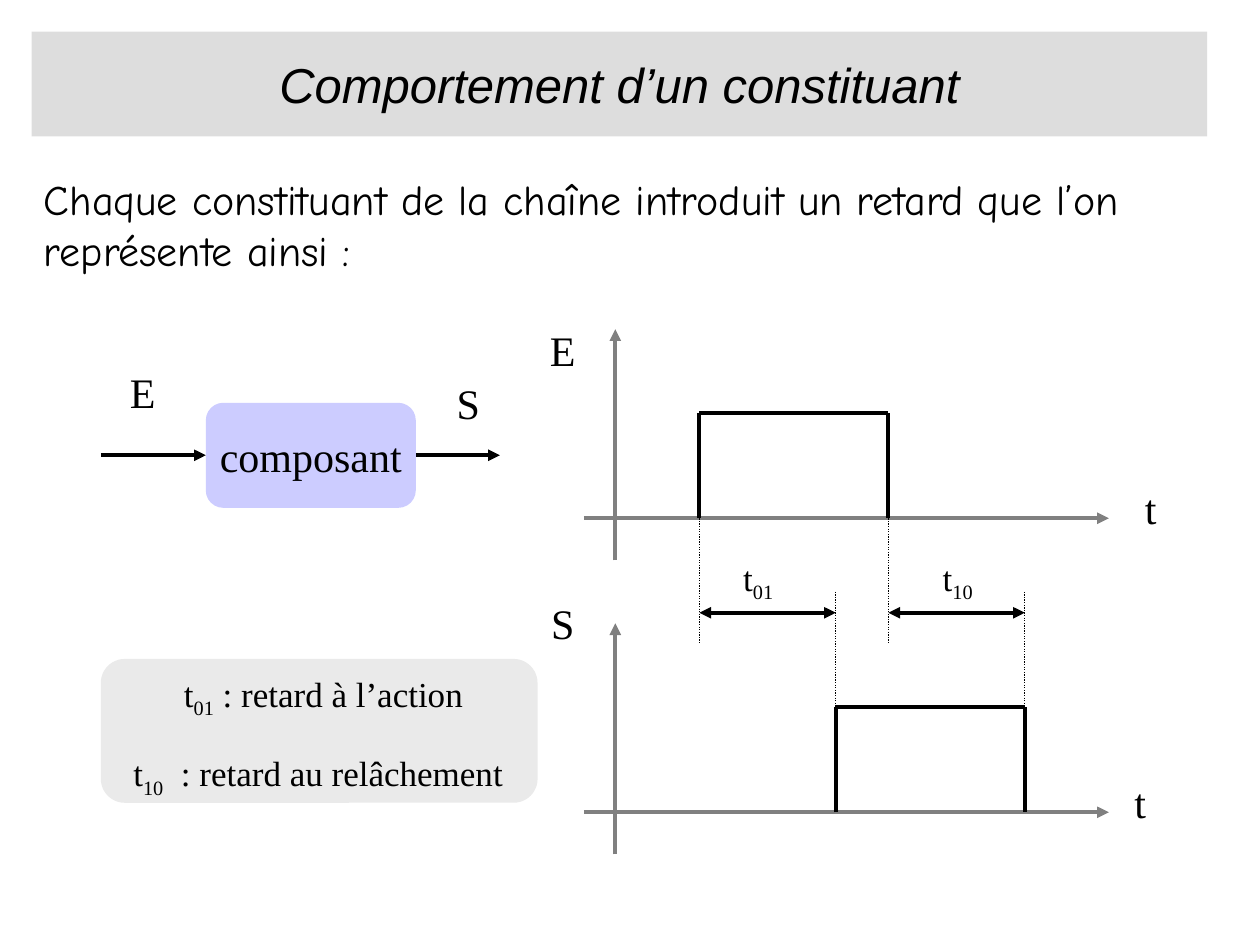
from dataclasses import dataclass
from typing import Any

from lxml import etree
from pptx import Presentation
from pptx import util as u
from pptx.dml.color import RGBColor
from pptx.enum import dml, shapes, text
from pptx.oxml.ns import qn

WIDTH, HEIGHT = 10, 7.5
STEP = 1 / 12
LEFT, TOP = 0.05, 0.03
SERIF = "Times New Roman"
BLACK, GREY = "000000", "808080"
CENTER = text.PP_ALIGN.CENTER
MIDDLE = text.MSO_ANCHOR.MIDDLE


@dataclass
class Signal:
    name: str
    base: int
    rise: int
    name_row: int
    t_col: int


@dataclass
class Label:
    words: str
    col: float
    row: float


SIGNALS = [Signal("E", 49, 66, 30, 106), Signal("S", 77, 79, 56, 105)]
PULSE_COLS, PULSE_ROWS = 18, 10
PORTS = [Label("E", 10, 34), Label("S", 41, 35)]
DELAYS = [Label("01", 69, 52), Label("10", 88, 52)]
DELAY_ROW = 58


def color(hex_code: str) -> RGBColor:
    return RGBColor.from_string(hex_code)


def x(col: float) -> int:
    return u.Inches(LEFT + col * STEP)


def y(row: float) -> int:
    return u.Inches(TOP + row * STEP)


def span(steps: float) -> int:
    return u.Inches(steps * STEP)


def apply(target: Any, formats: dict) -> None:
    for name, value in formats.items():
        setattr(target, name, value)


def write(p: Any, words: str, size: float, font: str = SERIF,
          sub: bool = False, italic: bool = False) -> None:
    r = p.add_run()
    r.text = words
    apply(r.font, {"size": u.Pt(size), "name": font, "italic": italic})
    r.font.color.rgb = color(BLACK)
    if sub:
        r._r.get_or_add_rPr().set("baseline", "-25000")


def text_box(s: Any, col: float, row: float, cols: float, rows: float,
             wrap: bool = True) -> Any:
    tf = s.shapes.add_textbox(x(col), y(row), span(cols), span(rows)).text_frame
    tf.word_wrap = wrap
    return tf.paragraphs[0]


def letter(s: Any, label: Label) -> None:
    p = text_box(s, label.col, label.row, 6, 6)
    p.alignment = CENTER
    write(p, label.words, 24)


def round_box(s: Any, col: float, row: float, cols: float, rows: float,
              fill: str) -> Any:
    sp = s.shapes.add_shape(shapes.MSO_SHAPE.ROUNDED_RECTANGLE,
                            x(col), y(row), span(cols), span(rows))
    sp.shadow.inherit = False
    sp.fill.solid()
    sp.fill.fore_color.rgb = color(fill)
    sp.line.fill.background()
    return sp


def line(s: Any, start: tuple, end: tuple, hex_code: str = BLACK,
         width: float = 2.25, ends: tuple = (), dotted: bool = False) -> Any:
    cn = s.shapes.add_connector(shapes.MSO_CONNECTOR.STRAIGHT,
                                x(start[0]), y(start[1]), x(end[0]), y(end[1]))
    cn.line.color.rgb = color(hex_code)
    cn.line.width = u.Pt(width)
    if dotted:
        cn.line.dash_style = dml.MSO_LINE.ROUND_DOT
    for tag in ends:
        etree.SubElement(cn.line._get_or_add_ln(), qn(tag), type="triangle")
    etree.SubElement(cn._element.spPr, qn("a:effectLst"))
    return cn


def add_title(s: Any) -> None:
    sp = s.shapes.title
    apply(sp, {"left": u.Inches(WIDTH * 0.025), "top": u.Inches(0.25),
               "width": u.Inches(9.33), "height": u.Inches(HEIGHT / 9)})
    sp.fill.solid()
    sp.fill.fore_color.rgb = color("DDDDDD")
    sp.text_frame.vertical_anchor = MIDDLE
    p = sp.text_frame.paragraphs[0]
    p.alignment = CENTER
    write(p, "Comportement d’un constituant", 28, "Arial", italic=True)


def add_component(s: Any) -> None:
    sp = round_box(s, 19, 38, 20, 10, "CCCCFF")
    apply(sp.text_frame, {"word_wrap": False, "vertical_anchor": MIDDLE})
    p = sp.text_frame.paragraphs[0]
    p.alignment = CENTER
    write(p, "composant", 24)
    line(s, (9, 43), (19, 43), ends=("a:tailEnd",)).end_connect(sp, 1)
    line(s, (39, 43), (47, 43), ends=("a:tailEnd",)).begin_connect(sp, 3)
    for port in PORTS:
        letter(s, port)


def add_signal(s: Any, signal: Signal) -> None:
    base, top = signal.base, signal.base - PULSE_ROWS
    fall = signal.rise + PULSE_COLS
    line(s, (58, base + 4), (58, base - 18), GREY, ends=("a:tailEnd",))
    line(s, (55, base), (105, base), GREY, ends=("a:tailEnd",))
    letter(s, Label(signal.name, 50, signal.name_row))
    letter(s, Label("t", signal.t_col, base - 4))
    corners = [(signal.rise, base), (signal.rise, top), (fall, top), (fall, base)]
    for start, end in zip(corners, corners[1:]):
        line(s, start, end)


def add_delays(s: Any) -> None:
    source, result = SIGNALS
    for label, shift in zip(DELAYS, (0, PULSE_COLS)):
        begin, end = source.rise + shift, result.rise + shift
        line(s, (begin, source.base), (begin, 61), width=0.75, dotted=True)
        line(s, (end, 56), (end, result.base - PULSE_ROWS), width=0.75, dotted=True)
        line(s, (end, DELAY_ROW), (begin, DELAY_ROW), ends=("a:headEnd", "a:tailEnd"))
        p = text_box(s, label.col, label.row, 5.5, 5.2, wrap=False)
        write(p, "t", 20)
        write(p, label.words, 20, sub=True)


def add_legend(s: Any) -> None:
    tf = round_box(s, 9, 62.4, 41.6, 13.7, "EAEAEA").text_frame
    apply(tf, {"word_wrap": True, "vertical_anchor": text.MSO_ANCHOR.TOP})
    meanings = [" : retard à l’action", "  : retard au relâchement"]
    paragraphs = [tf.paragraphs[0], tf.add_paragraph()]
    for p, delay, meaning in zip(paragraphs, DELAYS, meanings):
        p.alignment = CENTER
        write(p, " t", 20)
        write(p, delay.words, 20, sub=True)
        write(p, meaning, 20)
    write(paragraphs[1], " ", 24)
    paragraphs[1].space_before = u.Pt(14)


def main() -> None:
    prs = Presentation()
    apply(prs, {"slide_width": u.Inches(WIDTH), "slide_height": u.Inches(HEIGHT)})
    s = prs.slides.add_slide(prs.slide_layouts[5])
    add_title(s)
    add_component(s)
    for signal in SIGNALS:
        add_signal(s, signal)
    add_delays(s)
    add_legend(s)
    intro = text_box(s, 2.4, 15.6, 112.8, 10.9)
    write(intro, "Chaque constituant de la chaîne introduit un retard "
                 "que l’on représente ainsi :", 24, "Comic Neue")
    prs.save("out.pptx")


if __name__ == "__main__":
    main()
